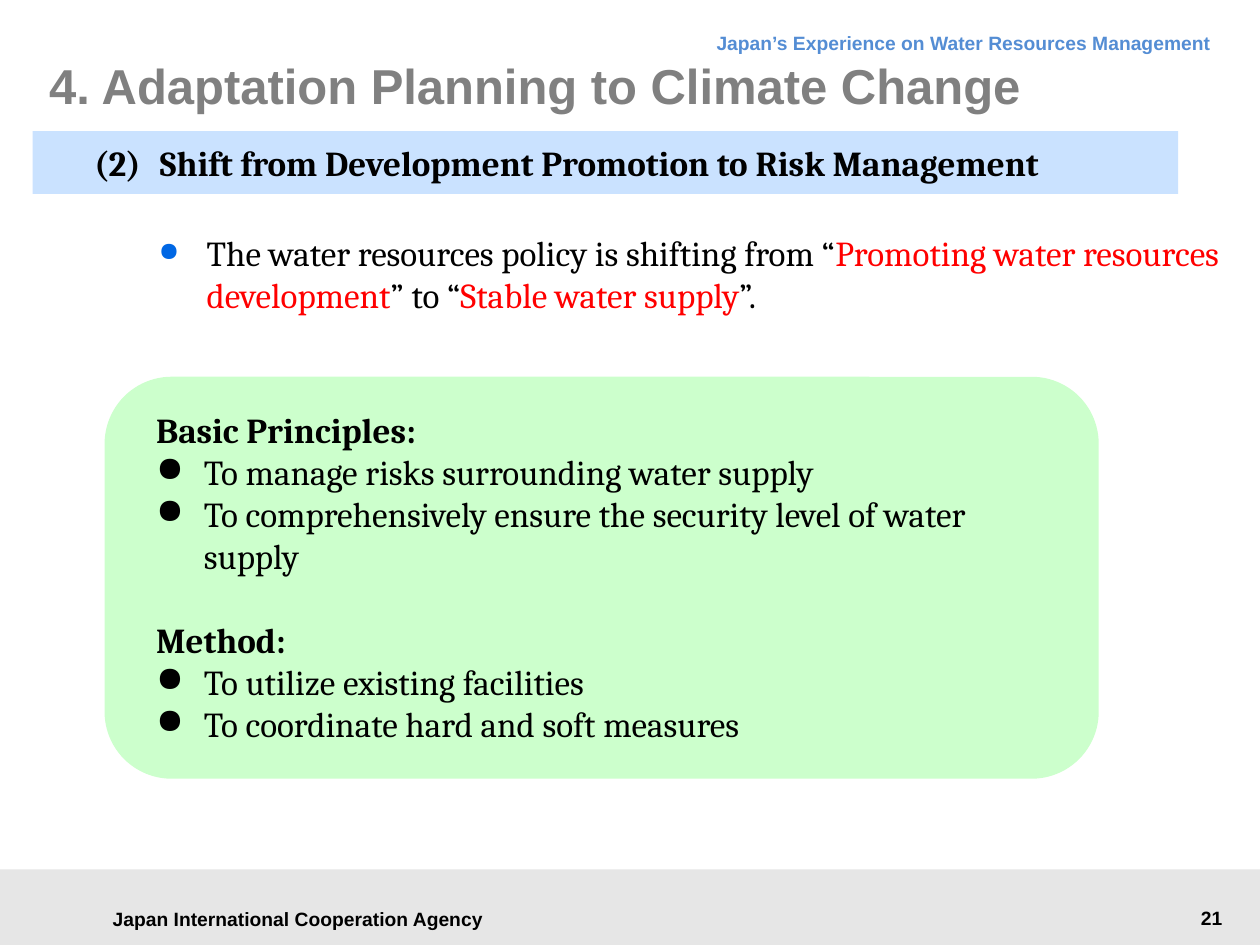
from dataclasses import dataclass

from lxml.etree import SubElement
from pptx import Presentation
from pptx.dml.color import RGBColor
from pptx.enum.shapes import MSO_SHAPE as Shape
from pptx.enum.text import MSO_ANCHOR as Anchor, PP_ALIGN as Align
from pptx.oxml.ns import qn
from pptx.util import Pt


@dataclass(frozen=True)
class Theme:
    heading_font: str = "Arial"
    body_font: str = "Cambria"
    title_size: int = 28
    body_size: int = 20
    small_size: int = 11
    ink: str = "000000"
    title: str = "808080"
    running_head: str = "548DD4"
    emphasis: str = "FF0000"
    bullet: str = "0067E4"
    banner: str = "CAE2FF"
    panel: str = "CCFFCC"
    footer: str = "E6E6E6"


theme = Theme()
HANGING = 27.36

deck = Presentation()
deck.slide_width, deck.slide_height = Pt(720), Pt(540)
slide = deck.slides.add_slide(deck.slide_layouts[6])


def add_block(kind, place, fill):
    block = slide.shapes.add_shape(kind, *map(Pt, place))
    block.shadow.inherit = False
    block.fill.solid()
    block.fill.fore_color.rgb = RGBColor.from_string(fill)
    block.line.fill.background()
    return block


def write(frame, text, size=theme.body_size, font=theme.body_font,
          color=theme.ink, bold=False, align=Align.LEFT, anchor=Anchor.TOP,
          insets=(7.2, 3.6, 7.2, 3.6), left=0, first=0, before=0, after=0,
          line=None, bullet=None, bullet_color=None, bullet_percent=None):
    """Add one paragraph; text is a string or a list of (string, color) runs."""
    frame.word_wrap = True
    frame.vertical_anchor = anchor
    (frame.margin_left, frame.margin_top,
     frame.margin_right, frame.margin_bottom) = map(Pt, insets)
    paragraph = frame.paragraphs[-1]
    if paragraph.runs:
        paragraph = frame.add_paragraph()
    paragraph.alignment = align
    paragraph.space_before, paragraph.space_after = Pt(before), Pt(after)
    if line:
        paragraph.line_spacing = Pt(line)
    properties = paragraph._p.get_or_add_pPr()
    properties.set("marL", str(Pt(left)))
    properties.set("indent", str(Pt(first)))
    if bullet_color:
        tint = SubElement(properties, qn("a:buClr"))
        SubElement(tint, qn("a:srgbClr"), val=bullet_color)
    if bullet_percent:
        SubElement(properties, qn("a:buSzPct"), val=str(bullet_percent * 1000))
    if bullet:
        SubElement(properties, qn("a:buChar"), char=bullet)
    for words, tone in [(text, color)] if isinstance(text, str) else text:
        run = paragraph.add_run()
        run.text = words
        run.font.name, run.font.size, run.font.bold = font, Pt(size), bold
        run.font.color.rgb = RGBColor.from_string(tone)


# Footer band, running head and title
add_block(Shape.RECTANGLE, (0, 496.8, 720, 43.2), theme.footer)
headings = [
    ((51.12, 512.64, 238.32, 24.48), "Japan International Cooperation Agency",
     dict(align=Align.CENTER, anchor=Anchor.MIDDLE)),
    ((195.84, 9.36, 503.28, 27.36),
     "Japan’s Experience on Water Resources Management",
     dict(color=theme.running_head, align=Align.RIGHT, line=18)),
    ((592.56, 514.08, 113.04, 20.88), "21", dict(align=Align.RIGHT)),
    ((28.08, 20.16, 683.28, 56.88), "4. Adaptation Planning to Climate Change",
     dict(size=theme.title_size, color=theme.title, anchor=Anchor.MIDDLE,
          insets=(0, 0, 0, 0))),
]
for place, words, look in headings:
    heading = slide.shapes.add_textbox(*map(Pt, place))
    write(heading.text_frame, words,
          **dict(size=theme.small_size, font=theme.heading_font, bold=True) | look)

# Section banner
banner = add_block(Shape.RECTANGLE, (18.72, 74.88, 654.48, 36), theme.banner)
write(banner.text_frame,
      "(2)\tShift from Development Promotion to Risk Management",
      bold=True, insets=(30.96, 5.76, 25.2, 5.76), left=41.76, first=-37.44)

# Policy statement
policy = slide.shapes.add_textbox(Pt(59.76), Pt(126.72), Pt(642.24), Pt(59.76))
write(policy.text_frame,
      [("The water resources policy is shifting from “", theme.ink),
       ("Promoting water resources development", theme.emphasis),
       ("” to “", theme.ink),
       ("Stable water supply", theme.emphasis),
       ("”.", theme.ink)],
      insets=(30.96, 5.76, 0, 5.76), left=HANGING, first=-HANGING, after=6,
      bullet="●", bullet_color=theme.bullet, bullet_percent=75)

# Principles and method panel
add_block(Shape.ROUNDED_RECTANGLE, (59.76, 215.28, 568.08, 229.68), theme.panel)
panel = slide.shapes.add_textbox(Pt(82.08), Pt(229.68), Pt(527.04), Pt(200.88))
topics = {
    "Basic Principles:": [
        "To manage risks surrounding water supply",
        "To comprehensively ensure the security level of water supply"],
    "Method:": [
        "To utilize existing facilities",
        "To coordinate hard and soft measures"],
}
for index, (topic, points) in enumerate(topics.items()):
    write(panel.text_frame, topic, bold=True, before=24 * index)
    for point in points:
        write(panel.text_frame, point, left=HANGING, first=-HANGING, bullet="●")

deck.save("out.pptx")
